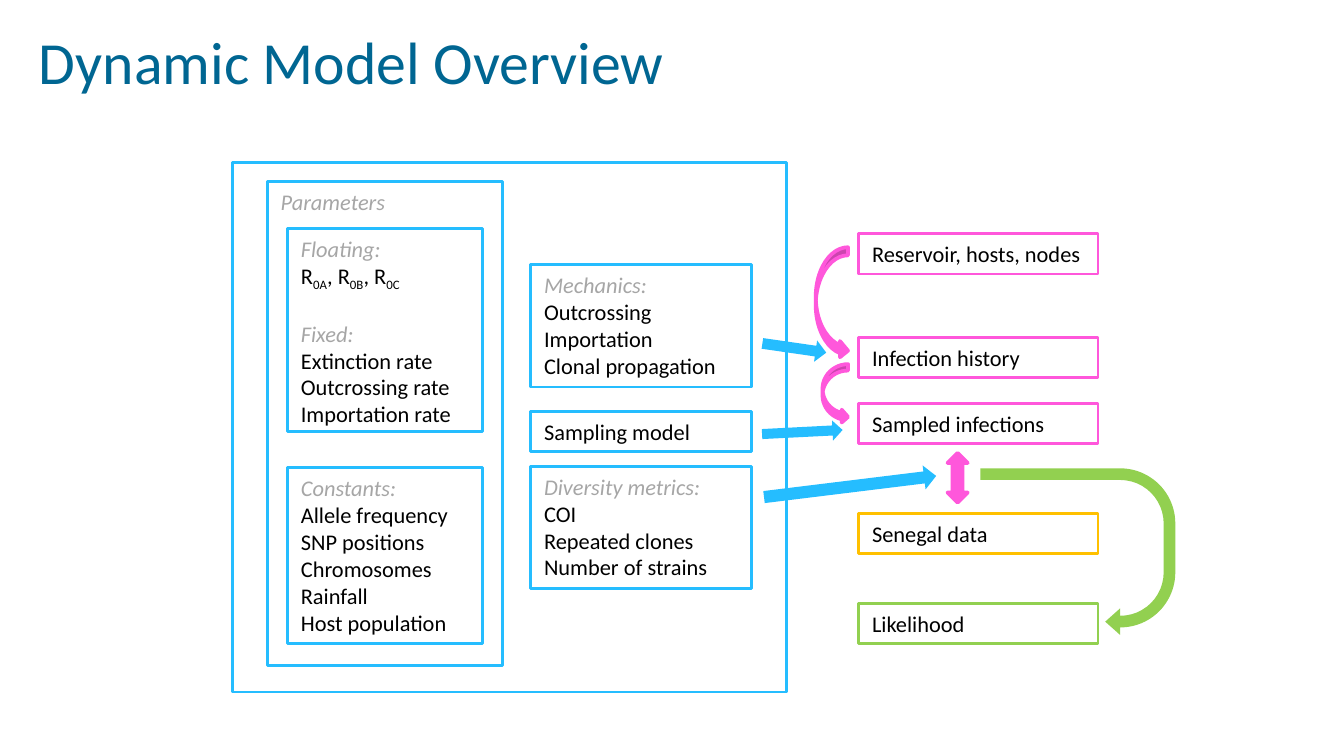
"""Build the dynamic model overview slide as boxes and arrows on a tenth-inch grid."""
import pptx
import pptx.dml.color
import pptx.enum.shapes
import pptx.enum.text
import pptx.util

RGBColor = pptx.dml.color.RGBColor
Shape = pptx.enum.shapes.MSO_SHAPE
Anchor = pptx.enum.text.MSO_ANCHOR
Align = pptx.enum.text.PP_ALIGN
Pt = pptx.util.Pt

TITLE_BLUE = RGBColor(0x00, 0x66, 0x92)
BLUE = RGBColor(0x25, 0xBD, 0xFF)
PINK = RGBColor(0xFF, 0x57, 0xDB)
YELLOW = RGBColor(0xFF, 0xC0, 0x00)
GREEN = RGBColor(0x92, 0xD0, 0x50)
GREY = RGBColor(0xA6, 0xA6, 0xA6)
BLACK = RGBColor(0x00, 0x00, 0x00)

FONT = "Calibri"
TEXT_SIZE = 12
LINE_HEIGHT = 14.65
LINE_ROWS = 3
SLIDE_COLUMNS = 100
SLIDE_ROWS = SLIDE_COLUMNS * 9 / 16

PARAMETER_COLUMN = (21.4, 14.5)
MODEL_COLUMN = (39.5, 16.4)
RESULT_COLUMN = (63.9, 17.8)

FRAMES = [
    ((17.3, 41.2), 12.1, 39.4, []),
    ((19.9, 17.5), 13.5, 36, ["Parameters"]),
]
PARAMETER_BOXES = [
    (17, 15.1, ["Floating:", "R|0A|, R|0B|, R|0C", "Fixed:",
                "Extinction rate", "Outcrossing rate", "Importation rate"]),
    (34.8, 13.1, ["Constants:", "Allele frequency", "SNP positions",
                  "Chromosomes", "Rainfall", "Host population"]),
]
MODEL_BOXES = [
    (19.7, 9.1, ["Mechanics:", "Outcrossing", "Importation", "Clonal propagation"]),
    (30.6, LINE_ROWS, ["Sampling model"]),
    (34.7, 9.1, ["Diversity metrics:", "COI", "Repeated clones", "Number of strains"]),
]
RESULT_BOXES = [
    (17.4, "Reservoir, hosts, nodes", PINK),
    (25.1, "Infection history", PINK),
    (30, "Sampled infections", PINK),
    (38.2, "Senegal data", YELLOW),
    (44.9, "Likelihood", GREEN),
]
MODEL_ARROWS = [
    ((56.7, 25.1, 4.8, 1.6), 8.2),
    ((56.7, 31.4, 6, 1.5), 357.1),
    ((56.8, 35.3, 12.9, 1.8), 353),
]
CURVED_ARROWS = [(60.7, 18.4, 2.4, 8.3), (61.2, 27.1, 1.9, 4.4)]


def grid(*cells):
    """Turn tenth-inch grid cells into slide lengths."""
    return [pptx.util.Inches(cell / 10) for cell in cells]


def format_font(font, size, color, italic=False):
    """Set the typeface, size, colour and slant of a font."""
    font.name = FONT
    font.size = Pt(size)
    font.color.rgb = color
    font.italic = italic


def is_heading(line):
    """Tell whether a line is a grey heading."""
    return line.endswith(":") or line == "Parameters"


def write_line(paragraph, line):
    """Write one line, in which bars enclose subscripts."""
    heading = is_heading(line)
    paragraph.alignment = Align.LEFT
    for index, part in enumerate(line.split("|")):
        run = paragraph.add_run()
        run.text = part
        format_font(run.font, TEXT_SIZE, GREY if heading else BLACK, heading)
        if index % 2:
            run._r.get_or_add_rPr().set("baseline", "-25000")


def add_box(slide, column, top, height, lines, color):
    """Add an outlined box with lines of text from its top."""
    left, width = column
    box = slide.shapes.add_shape(Shape.RECTANGLE, *grid(left, top, width, height))
    box.shadow.inherit = False
    box.fill.background()
    box.line.color.rgb = color
    box.line.width = Pt(1.5)
    frame = box.text_frame
    frame.vertical_anchor = Anchor.TOP
    for index, line in enumerate(lines):
        paragraph = frame.add_paragraph() if index else frame.paragraphs[0]
        write_line(paragraph, line)
        if index and is_heading(line):
            paragraph.space_before = Pt(LINE_HEIGHT)


def add_arrow(slide, kind, area, color, rotation=0, outlined=False):
    """Add a filled block arrow, with an outline if asked for."""
    arrow = slide.shapes.add_shape(kind, *grid(*area))
    arrow.shadow.inherit = False
    arrow.rotation = rotation
    arrow.fill.solid()
    arrow.fill.fore_color.rgb = color
    if outlined:
        arrow.line.color.rgb = color
        arrow.line.width = Pt(2)
    else:
        arrow.line.fill.background()
    return arrow


def add_title(slide, text):
    """Place and format the slide title."""
    title = slide.shapes.title
    title.left, title.top, title.width, title.height = grid(2, 1.5, 95.5, 6.7)
    frame = title.text_frame
    frame.text = text
    frame.vertical_anchor = Anchor.MIDDLE
    frame.margin_left = frame.margin_right = pptx.util.Inches(0.09)
    frame.margin_top = frame.margin_bottom = pptx.util.Inches(0.04)
    paragraph = frame.paragraphs[0]
    paragraph.alignment = Align.LEFT
    paragraph.line_spacing = 0.9
    format_font(paragraph.runs[0].font, 32, TITLE_BLUE)


def add_boxes(slide):
    """Add the frames and the three columns of boxes."""
    for column, top, height, lines in FRAMES:
        add_box(slide, column, top, height, lines, BLUE)
    for column, boxes in ((PARAMETER_COLUMN, PARAMETER_BOXES), (MODEL_COLUMN, MODEL_BOXES)):
        for top, height, lines in boxes:
            add_box(slide, column, top, height, lines, BLUE)
    for top, label, color in RESULT_BOXES:
        add_box(slide, RESULT_COLUMN, top, LINE_ROWS, [label], color)


def add_arrows(slide):
    """Add the arrows that link the model to its results."""
    for area in CURVED_ARROWS:
        arrow = add_arrow(slide, Shape.CURVED_LEFT_ARROW, area, PINK, outlined=True)
        arrow._element.spPr.get_or_add_xfrm().set("flipH", "1")
    add_arrow(slide, Shape.UP_DOWN_ARROW, (70.5, 33.7, 1.5, 3.7), PINK, outlined=True)
    for area, rotation in MODEL_ARROWS:
        add_arrow(slide, Shape.RIGHT_ARROW, area, BLUE, rotation)
    turn = add_arrow(slide, Shape.U_TURN_ARROW, (74, 33.8, 12.4, 14.5), GREEN, 90)
    for index, share in enumerate((0.07, 0.08, 0.09, 0.44, 0.36)):
        turn.adjustments[index] = share


def main():
    """Build and save the presentation."""
    presentation = pptx.Presentation()
    presentation.slide_width, presentation.slide_height = grid(SLIDE_COLUMNS, SLIDE_ROWS)
    slide = presentation.slides.add_slide(presentation.slide_layouts[5])
    add_title(slide, "Dynamic Model Overview")
    add_boxes(slide)
    add_arrows(slide)
    presentation.save("out.pptx")


if __name__ == "__main__":
    main()
